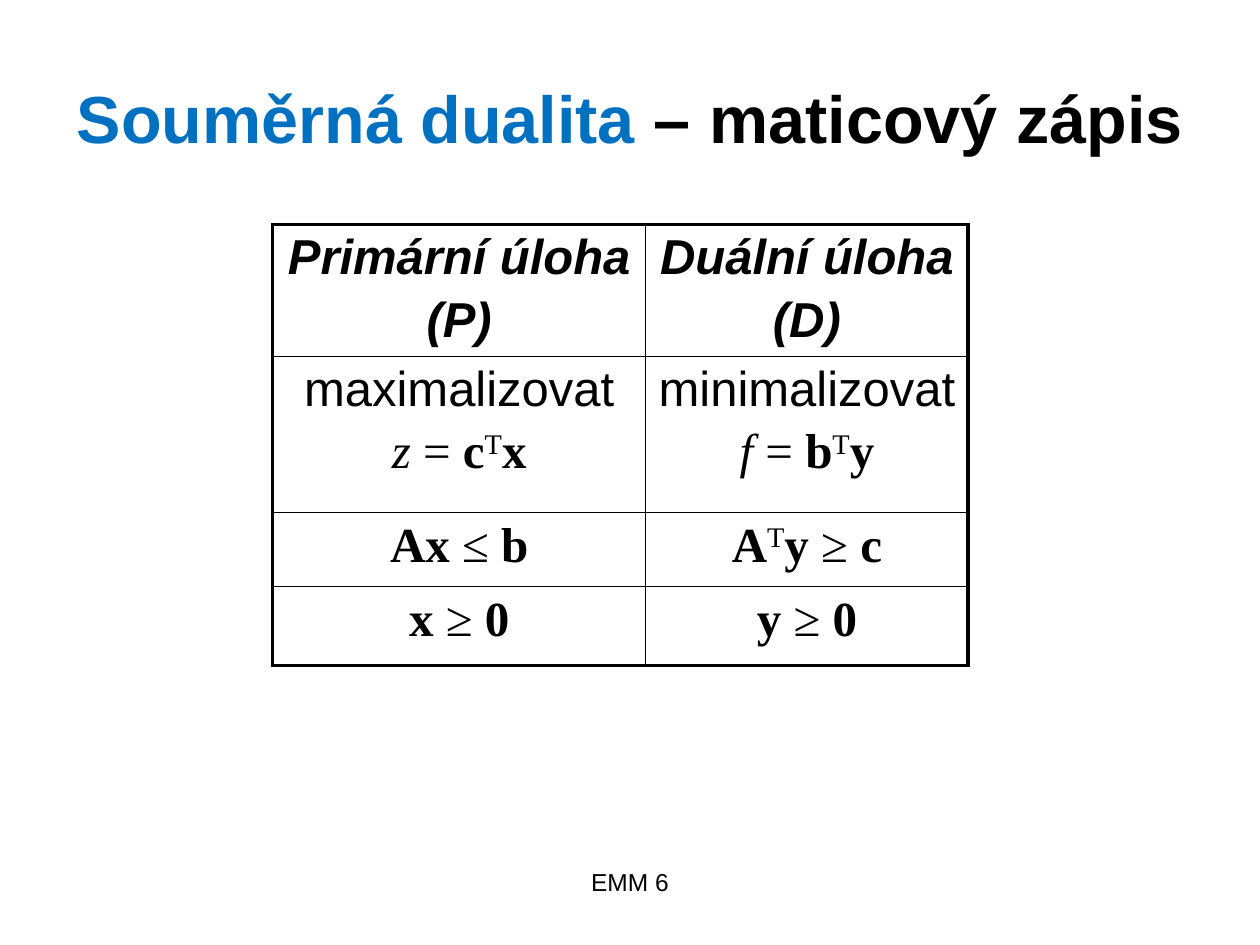
from dataclasses import dataclass
from typing import Any

from lxml import etree
from pptx import Presentation
from pptx import util as u
from pptx.dml.color import RGBColor
from pptx.enum import text
from pptx.oxml import ns

SANS, SERIF = "Arial", "Times New Roman"
BLACK, BLUE = "000000", "0070C0"
THIN, THICK = 1, 2.25


def colour(value):
    return RGBColor.from_string(value)


@dataclass
class SlideBuilder:
    slide: Any
    size: float = 28
    paragraph_gap: float = 4.5

    def add_runs(self, paragraph, pieces, font=SANS, size=None):
        """Add (text, style, colour) pieces; style letters: b bold, i italic, ^ superscript."""
        paragraph.alignment = text.PP_ALIGN.CENTER
        for words, style, ink in pieces:
            run = paragraph.add_run()
            run.text = words
            run.font.name = font
            run.font.size = u.Pt(size or self.size)
            run.font.bold = "b" in style
            run.font.italic = "i" in style
            run.font.color.rgb = colour(ink)
            if "^" in style:
                run.font._element.set("baseline", "30000")

    def title(self, box, pieces, size):
        shape = self.slide.shapes.title
        shape.left, shape.top, shape.width, shape.height = map(u.Pt, box)
        frame = shape.text_frame
        frame.margin_left = frame.margin_right = 0
        frame.vertical_anchor = text.MSO_ANCHOR.MIDDLE
        self.add_runs(frame.paragraphs[0], pieces, size=size)

    def label(self, box, words, size):
        frame = self.slide.shapes.add_textbox(*map(u.Pt, box)).text_frame
        frame.word_wrap = True
        self.add_runs(frame.paragraphs[0], [(words, "", BLACK)], size=size)

    def borders(self, cell, widths):
        properties = cell._tc.get_or_add_tcPr()
        for side, width in zip("LRTB", widths):
            line = etree.SubElement(properties, ns.qn(f"a:ln{side}"), w=str(int(u.Pt(width))))
            fill = etree.SubElement(line, ns.qn("a:solidFill"))
            etree.SubElement(fill, ns.qn("a:srgbClr"), val=BLACK)

    def table(self, left, top, widths, heights, rows):
        """Each cell is a list of paragraphs, each a (font, pieces) pair."""
        frame = self.slide.shapes.add_table(
            len(heights), len(widths), u.Pt(left), u.Pt(top),
            u.Pt(sum(widths)), u.Pt(sum(heights)))
        table = frame.table
        table.first_row = table.horz_banding = False
        for column, width in zip(table.columns, widths):
            column.width = u.Pt(width)
        for row, height in zip(table.rows, heights):
            row.height = u.Pt(height)
        last_row, last_column = len(heights) - 1, len(widths) - 1
        for r, row in enumerate(rows):
            for c, content in enumerate(row):
                cell = table.cell(r, c)
                outer = (c == 0, c == last_column, r == 0, r == last_row)
                self.borders(cell, [THICK if edge else THIN for edge in outer])
                cell.fill.background()
                for index, (font, pieces) in enumerate(content):
                    if index:
                        paragraph = cell.text_frame.add_paragraph()
                        paragraph.space_before = u.Pt(self.paragraph_gap)
                    else:
                        paragraph = cell.text_frame.paragraphs[0]
                    self.add_runs(paragraph, pieces, font)


def plain(content, style=""):
    return SANS, [(content, style, BLACK)]


def formula(*pieces):
    return SERIF, [(content, style, BLACK) for content, style in pieces]


def heading(name, symbol):
    return [plain(name, "bi"), plain(symbol, "bi")]


def objective(verb, value, equals, coefficients, variables):
    return [plain(verb), formula((value, "i"), (equals, ""), (coefficients, "b"),
                                 ("T", "^"), (variables, "b"))]


def nonnegative(variables):
    return [formula((variables + " ", "b"), ("≥ ", ""), ("0", "b"))]


def main():
    presentation = Presentation()
    presentation.slide_width, presentation.slide_height = u.Pt(720), u.Pt(540)
    builder = SlideBuilder(presentation.slides.add_slide(presentation.slide_layouts[5]))
    builder.title((36, 21.6, 648, 90),
                  [("Souměrná dualita ", "b", BLUE), ("– maticový zápis", "b", BLACK)], 38)
    builder.table(155.8, 128.2, (213.2, 184.2), (75.4, 89.2, 42.4, 45), [
        [heading("Primární úloha", "(P)"), heading("Duální úloha", "(D)")],
        [objective("maximalizovat", "z", " = ", "c", "x"),
         objective("minimalizovat", "f ", "= ", "b", "y")],
        [[formula(("Ax ", "b"), ("≤ ", ""), ("b", "b"))],
         [formula(("A", "b"), ("T", "^"), ("y ", "b"), ("≥ ", ""), ("c", "b"))]],
        [nonnegative("x"), nonnegative("y")],
    ])
    builder.label((246, 492, 228, 37), "EMM 6", 14)
    presentation.save("out.pptx")


if __name__ == "__main__":
    main()
